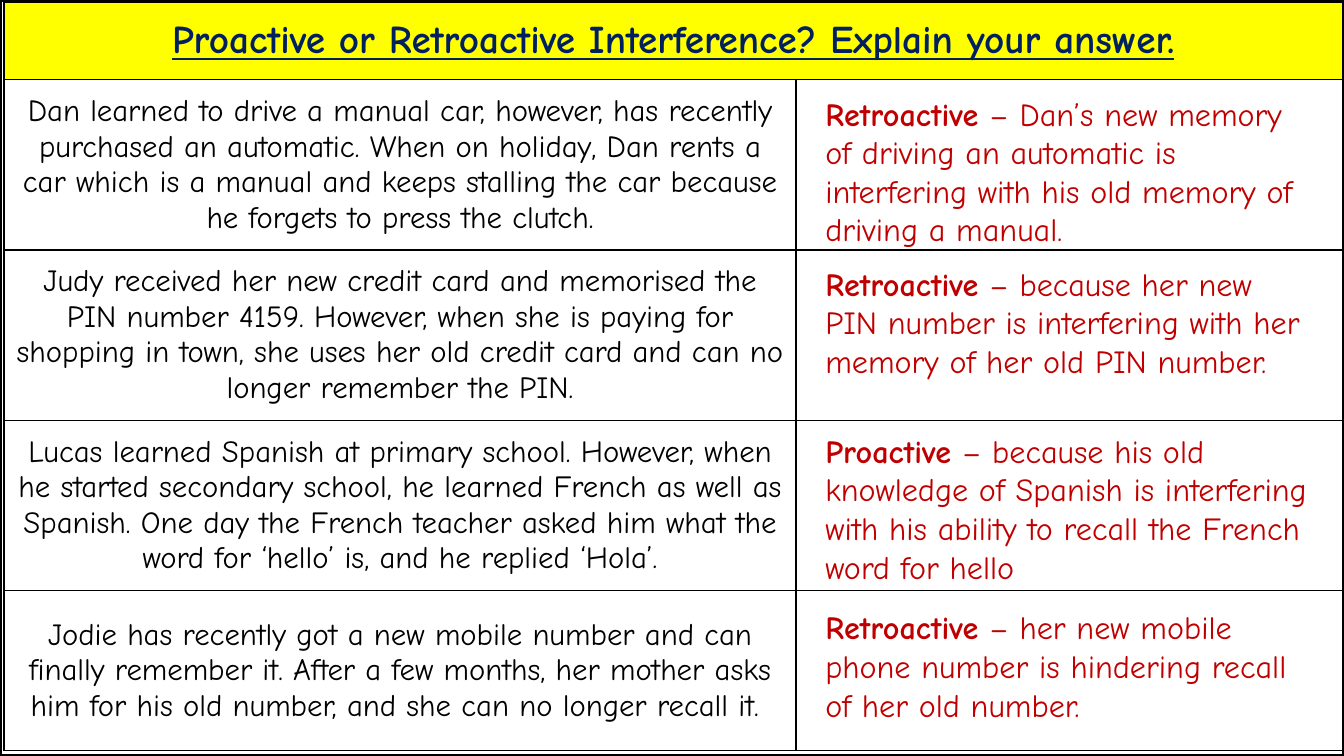
import pptx
import pptx.util
import pptx.dml.color
import pptx.enum.text
import pptx.enum.shapes
import pptx.oxml

Cm = pptx.util.Cm
Pt = pptx.util.Pt
RGB = pptx.dml.color.RGBColor
TEXT = pptx.enum.text

BLACK = RGB(0x00, 0x00, 0x00)
NAVY = RGB(0x00, 0x20, 0x60)
RED = RGB(0xC0, 0x00, 0x00)
YELLOW = RGB(0xFF, 0xFF, 0x00)

TITLE = "Proactive or Retroactive Interference? Explain your answer."
CASES = [
    ("Dan learned to drive a manual car, however, has recently purchased an automatic. "
     "When on holiday, Dan rents a car which is a manual and keeps stalling the car "
     "because he forgets to press the clutch.",
     "Retroactive",
     " – Dan’s new memory of driving an automatic is interfering with his old memory "
     "of driving a manual."),
    ("Judy received her new credit card and memorised the PIN number 4159. However, when "
     "she is paying for shopping in town, she uses her old credit card and can no longer "
     "remember the PIN.",
     "Retroactive",
     " – because her new PIN number is interfering with her memory of her old PIN number."),
    ("Lucas learned Spanish at primary school. However, when he started secondary school, "
     "he learned French as well as Spanish. One day the French teacher asked him what the "
     "word for ‘hello’ is, and he replied ‘Hola’.",
     "Proactive",
     " – because his old knowledge of Spanish is interfering with his ability to recall "
     "the French word for hello"),
    ("Jodie has recently got a new mobile number and can finally remember it. After a few "
     "months, her mother asks him for his old number, and she can no longer recall it. ",
     "Retroactive",
     " – her new mobile phone number is hindering recall of her old number."),
]

WIDTHS = [19.96, 13.77]
HEIGHTS = [1.96, 4.29, 4.29, 4.29, 4.04]
LEFT, TOP = 0.1, 0.05
NOTE_LEFT, NOTE_WIDTH = 20.55, 12.83
NOTE_TOPS = [2.24, 6.53, 10.74, 15.19]
NOTE_HEIGHTS = [4.19, 4.19, 4.19, 3.2]

BASE = {"name": "Comic Neue"}
HEAD = {**BASE, "size": Pt(28), "bold": True, "underline": True}
CASE = {**BASE, "size": Pt(22), "bold": False}
LABEL = {**BASE, "size": Pt(23), "bold": True}
NOTE = {**LABEL, "bold": False}


def add_run(para, text, form, color):
    run = para.add_run()
    run.text = text
    for key, value in form.items():
        setattr(run.font, key, value)
    run.font.color.rgb = color


def fill_cell(cell, text, form, color):
    cell.vertical_anchor = TEXT.MSO_ANCHOR.MIDDLE
    para = cell.text_frame.paragraphs[0]
    para.alignment = TEXT.PP_ALIGN.CENTER
    add_run(para, text, form, color)


def add_edges(cell):
    props = cell._tc.get_or_add_tcPr()
    for spot, side in enumerate("LRTB"):
        props.insert(spot, pptx.oxml.parse_xml(
            f'<a:ln{side} xmlns:a="http://schemas.openxmlformats.org/drawingml/2006/main" '
            f'w="{Pt(1)}"><a:solidFill><a:srgbClr val="{BLACK}"/></a:solidFill></a:ln{side}>'))


def add_table(slide):
    table = slide.shapes.add_table(
        len(HEIGHTS), len(WIDTHS), Cm(LEFT), Cm(TOP),
        Cm(sum(WIDTHS)), Cm(sum(HEIGHTS))).table
    table.first_row = table.horz_banding = False
    for col, width in zip(table.columns, WIDTHS):
        col.width = Cm(width)
    for row, height in zip(table.rows, HEIGHTS):
        row.height = Cm(height)
    for cell in table.iter_cells():
        cell.fill.background()
        add_edges(cell)
    head = table.cell(0, 0)
    head.merge(table.cell(0, 1))
    head.fill.solid()
    head.fill.fore_color.rgb = YELLOW
    fill_cell(head, TITLE, HEAD, NAVY)
    for row, (case, _, _) in enumerate(CASES, 1):
        fill_cell(table.cell(row, 0), case, CASE, BLACK)


def add_notes(slide):
    for (_, label, note), top, height in zip(CASES, NOTE_TOPS, NOTE_HEIGHTS):
        frame = slide.shapes.add_textbox(
            Cm(NOTE_LEFT), Cm(top), Cm(NOTE_WIDTH), Cm(height)).text_frame
        frame.word_wrap = True
        frame.auto_size = TEXT.MSO_AUTO_SIZE.SHAPE_TO_FIT_TEXT
        para = frame.paragraphs[0]
        add_run(para, label, LABEL, RED)
        add_run(para, note, NOTE, RED)


def add_frame(slide, width, height):
    frame = slide.shapes.add_shape(
        pptx.enum.shapes.MSO_SHAPE.RECTANGLE, 0, 0, width, height)
    frame.shadow.inherit = False
    frame.fill.background()
    frame.line.color.rgb = BLACK
    frame.line.width = Pt(2.25)


def main():
    deck = pptx.Presentation()
    deck.slide_width, deck.slide_height = Cm(33.87), Cm(19.05)
    slide = deck.slides.add_slide(deck.slide_layouts[6])
    add_table(slide)
    add_notes(slide)
    add_frame(slide, deck.slide_width, deck.slide_height)
    deck.save("out.pptx")


if __name__ == "__main__":
    main()
